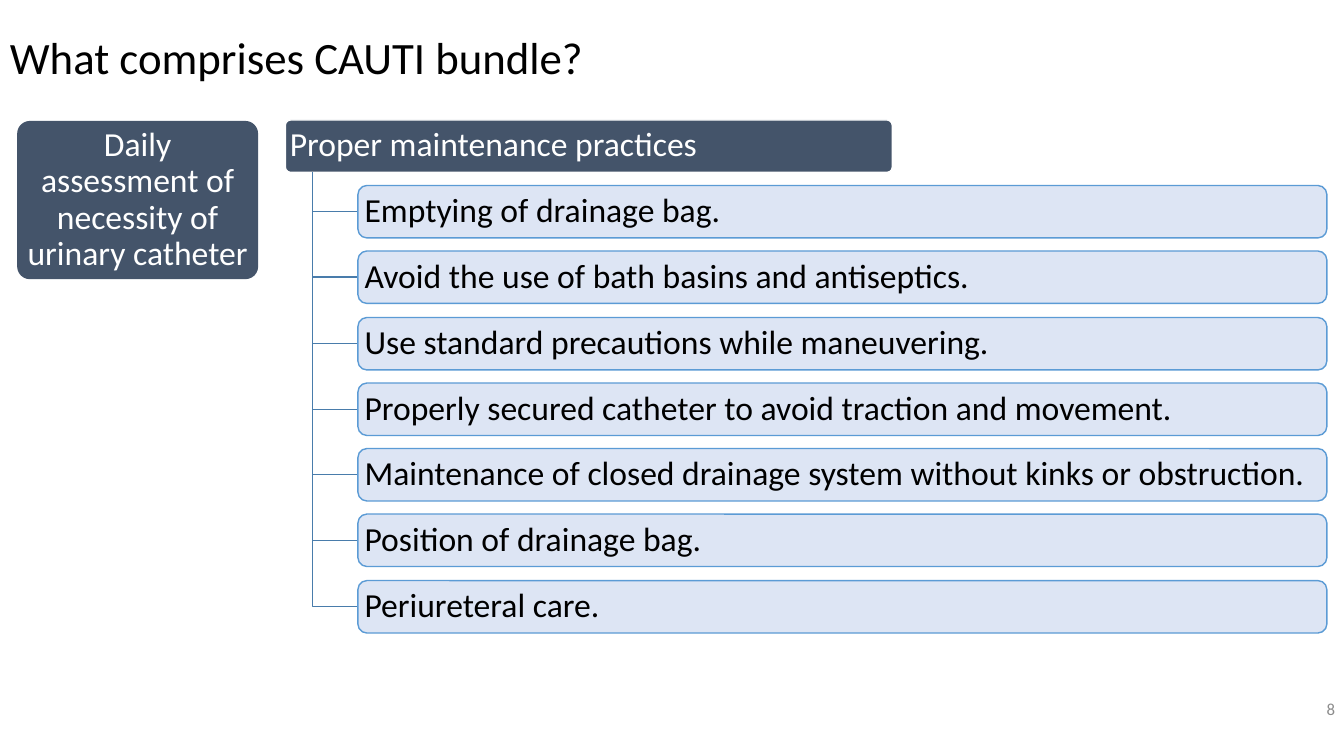
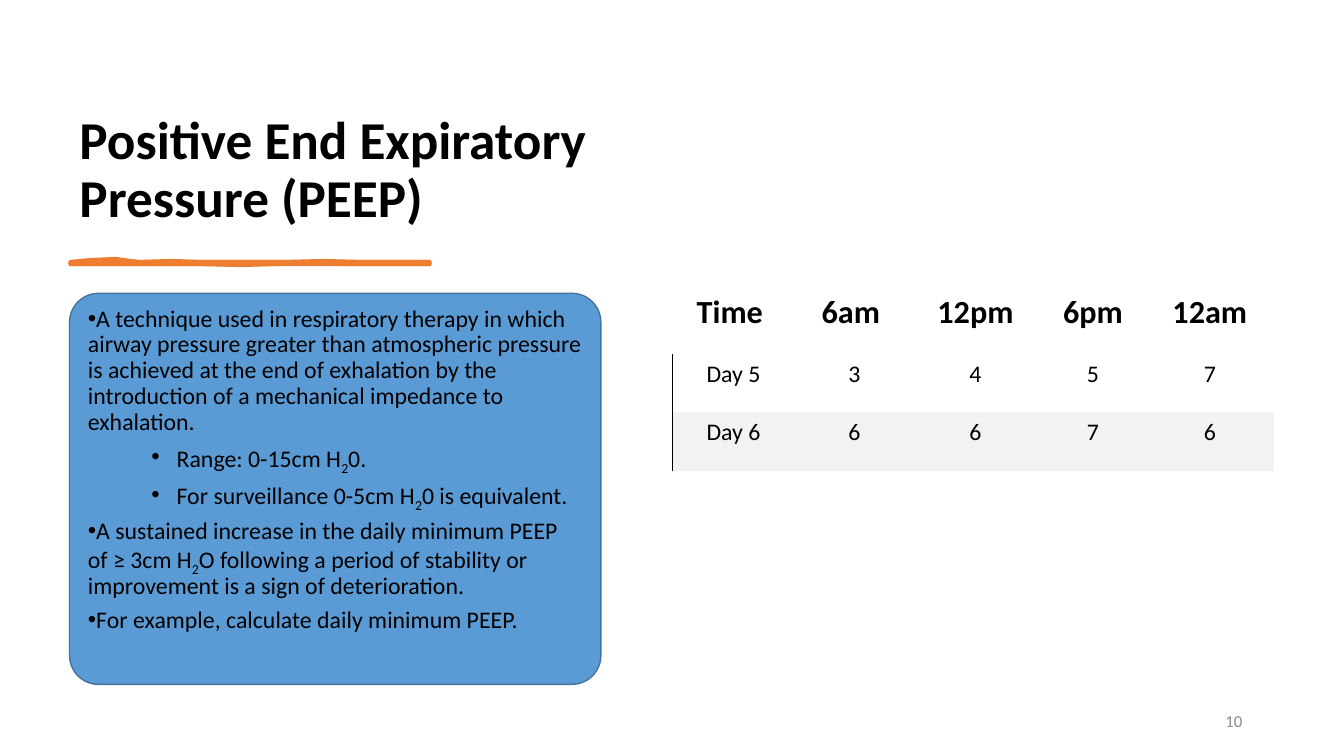
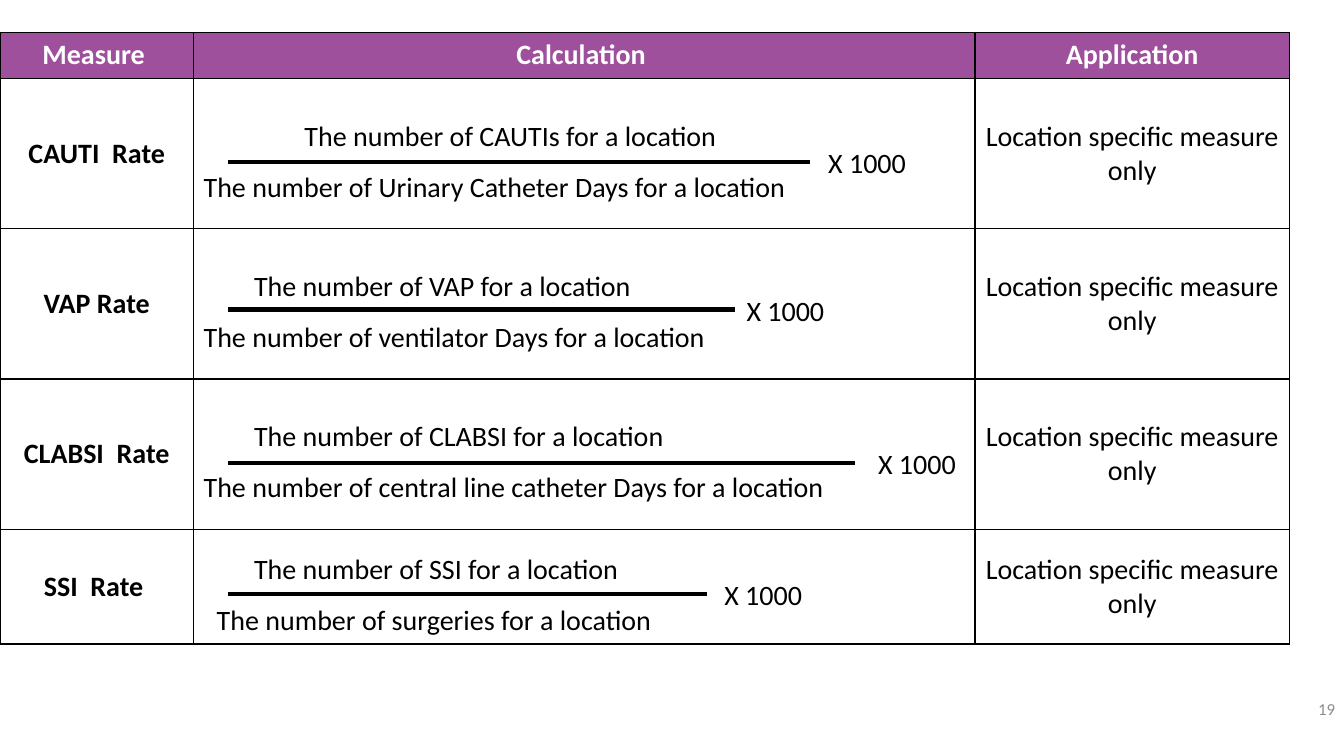
from lxml import etree
from pptx import Presentation, util as u
from pptx.dml.color import RGBColor
from pptx.enum import shapes, text
from pptx.oxml.ns import qn

PX = 9144  # one px is a hundredth of an inch
FONT = "Calibri"
BLACK = RGBColor(0x00, 0x00, 0x00)
WHITE = RGBColor(0xFF, 0xFF, 0xFF)
GREY = RGBColor(0x8C, 0x8C, 0x8C)
SLATE = RGBColor(0x44, 0x54, 0x6A)
PALE = RGBColor(0xDA, 0xE3, 0xF3)
BLUE = RGBColor(0x5B, 0x9B, 0xD5)
ELBOW = RGBColor(0x49, 0x7C, 0xAB)
EDGE = RGBColor(0x43, 0x73, 0x9E)
ORANGE = RGBColor(0xED, 0x7D, 0x31)
PURPLE = RGBColor(0x9E, 0x50, 0x9D)
BAND = RGBColor(0xF2, 0xF2, 0xF2)
NO_STYLE = "{2D5ABB26-0587-4C30-8999-92F81FD0307C}"

LEFT, CENTER, RIGHT = text.PP_ALIGN.LEFT, text.PP_ALIGN.CENTER, text.PP_ALIGN.RIGHT
TOP, MIDDLE, BOTTOM = text.MSO_ANCHOR.TOP, text.MSO_ANCHOR.MIDDLE, text.MSO_ANCHOR.BOTTOM

PRACTICES = [
    "Emptying of drainage bag.",
    "Avoid the use of bath basins and antiseptics.",
    "Use standard precautions while maneuvering.",
    "Properly secured catheter to avoid traction and movement.",
    "Maintenance of closed drainage system without kinks or obstruction.",
    "Position of drainage bag.",
    "Periureteral care.",
]
# Text between bars is subscript; the number is the left indent
PEEP_NOTES = [
    ("A technique used in respiratory therapy in which airway pressure greater than "
     "atmospheric pressure is achieved at the end of exhalation by the introduction of "
     "a mechanical impedance to exhalation.", 0),
    ("Range: 0-15cm H|2|0.", 88),
    ("For surveillance 0-5cm H|2|0 is equivalent.", 88),
    ("A sustained increase in the daily minimum PEEP of ≥ 3cm H|2|O following a period "
     "of stability or improvement is a sign of deterioration.", 0),
    ("For example, calculate daily minimum PEEP.", 0),
]
PEEP_ROWS = [
    ["Time ", "6am ", "12pm", "6pm", "12am"],
    ["Day 5", "3", "4", "5", "7"],
    ["Day 6", "6", "6", "7", "6"],
]
# Measure, numerator and indent, denominator and indent, bar y and end, factor left and width
RATES = [
    ("CAUTI  Rate", "CAUTIs", 100, "Urinary Catheter Days", 0, 161, 803, 803, 114),
    ("VAP Rate", "VAP", 50, "ventilator Days", 0, 307, 729, 729, 100),
    ("CLABSI  Rate", "CLABSI", 50, "central line catheter Days", 0, 459, 848, 848, 123),
    ("SSI  Rate ", "SSI", 50, "surgeries", 13, 589, 701, 707, 100),
]


def px(*ns):
    return [u.Emu(n * PX) for n in ns]


# Text
def write(tf, content, size=20, color=BLACK, bold=False, align=LEFT, spacing=1.0,
          after=0, indent=0, bullet=None):
    p = tf.paragraphs[0] if not tf.text else tf.add_paragraph()
    p.alignment, p.line_spacing, p.space_after = align, spacing, u.Pt(after)
    ppr = p._p.get_or_add_pPr()
    ppr.set("marL", str(indent * PX))
    ppr.set("indent", str(-25 * PX if bullet else 0))
    if bullet:
        etree.SubElement(ppr, qn("a:buFont")).set("typeface", "Arial")
        etree.SubElement(ppr, qn("a:buChar")).set("char", bullet)
    for i, part in enumerate(content.split("|")):
        r = p.add_run()
        r.text = part
        f = r.font
        f.name, f.size, f.bold = FONT, u.Pt(size), bold
        f.color.rgb = color
        if i % 2:
            r._r.get_or_add_rPr().set("baseline", "-25000")


def frame(tf, anchor=MIDDLE, ins=(10, 5, 10, 5)):
    tf.word_wrap = True
    tf.vertical_anchor = anchor
    tf.margin_left, tf.margin_top, tf.margin_right, tf.margin_bottom = px(*ins)
    return tf


def label(s, box, content, anchor=MIDDLE, **fmt):
    write(frame(s.shapes.add_textbox(*px(*box)).text_frame, anchor), content, **fmt)


def title(s, box, content, **fmt):
    label(s, box, content, spacing=0.9, **fmt)


def page_number(s, number, box=(1264, 679, 70, 48)):
    label(s, box, str(number), size=12, color=GREY, align=RIGHT)


# Shapes
def paint(sp, fill=None, line=None, width=1.0):
    sp.shadow.inherit = False
    if fill is None:
        sp.fill.background()
    else:
        sp.fill.solid()
        sp.fill.fore_color.rgb = fill
    if line is None:
        sp.line.fill.background()
    else:
        sp.line.color.rgb, sp.line.width = line, u.Pt(width)
    return sp


def card(s, box, fill, line=None, radius=0.1, alpha=None, anchor=MIDDLE, ins=(10, 5, 10, 5)):
    sp = s.shapes.add_shape(shapes.MSO_SHAPE.ROUNDED_RECTANGLE, *px(*box))
    sp.adjustments[0] = radius
    paint(sp, fill, line)
    if alpha:
        clr = sp._element.spPr.find(qn("a:solidFill"))[0]
        etree.SubElement(clr, qn("a:alpha")).set("val", str(alpha * 1000))
    return frame(sp.text_frame, anchor, ins)


def outline(s, contours, close=True, **look):
    fb = s.shapes.build_freeform(*contours[0][0], scale=PX)
    for i, pts in enumerate(contours):
        if i:
            fb.move_to(*pts[0])
        fb.add_line_segments(pts[1:], close=close)
    paint(fb.convert_to_shape(), **look)


def rule(s, x1, y, x2):
    c = s.shapes.add_connector(shapes.MSO_CONNECTOR.STRAIGHT, *px(x1, y, x2, y))
    c.line.color.rgb, c.line.width = BLACK, u.Pt(3)
    etree.SubElement(c._element.spPr, qn("a:effectLst"))


# Tables
def grid(s, x, y, cols, rows):
    t = s.shapes.add_table(len(rows), len(cols), *px(x, y, sum(cols), sum(rows))).table
    t.first_row = t.horz_banding = False
    t._tbl.tblPr.find(qn("a:tableStyleId")).text = NO_STYLE
    for col, w in zip(t.columns, px(*cols)):
        col.width = w
    for row, h in zip(t.rows, px(*rows)):
        row.height = h
    return t


def style_cell(cell, fill=None, anchor=MIDDLE, ins=(10, 5, 10, 5), sides="", width=1.0):
    cell.vertical_anchor = anchor
    cell.margin_left, cell.margin_top, cell.margin_right, cell.margin_bottom = px(*ins)
    tcpr = cell._tc.get_or_add_tcPr()
    for side in sides:
        ln = etree.SubElement(tcpr, qn("a:ln" + side), w=str(int(width * 12700)))
        solid = etree.SubElement(ln, qn("a:solidFill"))
        etree.SubElement(solid, qn("a:srgbClr")).set("val", str(BLACK))
    if fill is None:
        cell.fill.background()
    else:
        cell.fill.solid()
        cell.fill.fore_color.rgb = fill
    return cell.text_frame


# Slides
def bundle_slide(s):
    title(s, (0, 0, 1333, 119), "What comprises CAUTI bundle?", size=32)
    fmt = dict(size=24, spacing=0.9)
    tf = card(s, (17, 120, 239, 157), SLATE, radius=0.08, ins=(2, 2, 2, 2))
    write(tf, "Daily assessment of necessity of urinary catheter",
          color=WHITE, align=CENTER, **fmt)
    tf = card(s, (283, 119, 602, 52), SLATE, WHITE, ins=(3, 3, 3, 4))
    write(tf, "Proper maintenance practices", color=WHITE, **fmt)
    height = 52
    for i, practice in enumerate(PRACTICES):
        y = 184 + round(i * 65.3)
        mid = y + height // 2
        outline(s, [[(310, 171), (310, mid), (354, mid)]], close=False, line=ELBOW)
        tf = card(s, (355, y, 961, height), PALE, BLUE, radius=0.17, alpha=90, ins=(4, 3, 4, 3))
        write(tf, practice, **fmt)
    page_number(s, 8)


def peep_slide(s):
    title(s, (69, 70, 527, 162), "Positive End Expiratory Pressure (PEEP)",
          anchor=BOTTOM, size=38, bold=True)
    # Hand-drawn underline: two overlapping strokes
    outline(s, [
        [(70, 260), (90, 258), (115, 257), (138, 260), (209, 260), (284, 260), (320, 259),
         (359, 260), (426, 260), (426, 262), (348, 262), (300, 261), (270, 262), (240, 263),
         (199, 262), (150, 262), (70, 262)],
        [(70, 260), (138, 260), (170, 259), (199, 260), (277, 260), (344, 260), (380, 260),
         (426, 260), (426, 262), (355, 262), (277, 262), (216, 262), (145, 262), (70, 262)],
    ], fill=ORANGE, line=ORANGE, width=3)
    tf = card(s, (69, 291, 527, 388), BLUE, EDGE, radius=0.074, anchor=TOP)
    for note, indent in PEEP_NOTES:
        write(tf, note, size=17, spacing=0.9, after=6, indent=indent, bullet="•")
    page_number(s, 10, (942, 695, 300, 40))
    t = grid(s, 667, 284, [125, 115, 125, 108, 124], [67, 58, 58])
    for i, row in enumerate(PEEP_ROWS):
        head = i == 0
        for j, value in enumerate(row):
            tf = style_cell(t.cell(i, j), BAND if i == 2 else None,
                            BOTTOM if head else MIDDLE, (10, 3, 14, 21),
                            "" if head or j else "L", 0.75)
            write(tf, value, size=23 if head else 17, bold=head, align=CENTER)


def rates_slide(s):
    page_number(s, 19)
    t = grid(s, 0, 32, [192, 775, 312], [46, 149, 149, 149, 114])
    for j, head in enumerate(["Measure ", "Calculation ", "Application"]):
        tf = style_cell(t.cell(0, j), PURPLE, TOP, sides="LRTB")
        write(tf, head, color=WHITE, bold=True, align=CENTER)
    for i, (name, top, top_in, base, base_in, y, end, left, width) in enumerate(RATES, 1):
        measure, calc, use = [style_cell(t.cell(i, j), sides="LRTB") for j in range(3)]
        write(measure, name, bold=True, align=CENTER)
        for what, indent in ((top, top_in), (base, base_in)):
            write(calc, f"The number of {what} for a location", spacing=1.5, indent=indent)
        write(use, "Location specific measure only", align=CENTER)
        rule(s, 226, y, end)
        label(s, (left, y - 28, width, 57), "X 1000", align=CENTER)


def main():
    prs = Presentation()
    prs.slide_width, prs.slide_height = px(1333, 750)
    for build in (bundle_slide, peep_slide, rates_slide):
        build(prs.slides.add_slide(prs.slide_layouts[6]))
    prs.save("out.pptx")


if __name__ == "__main__":
    main()
